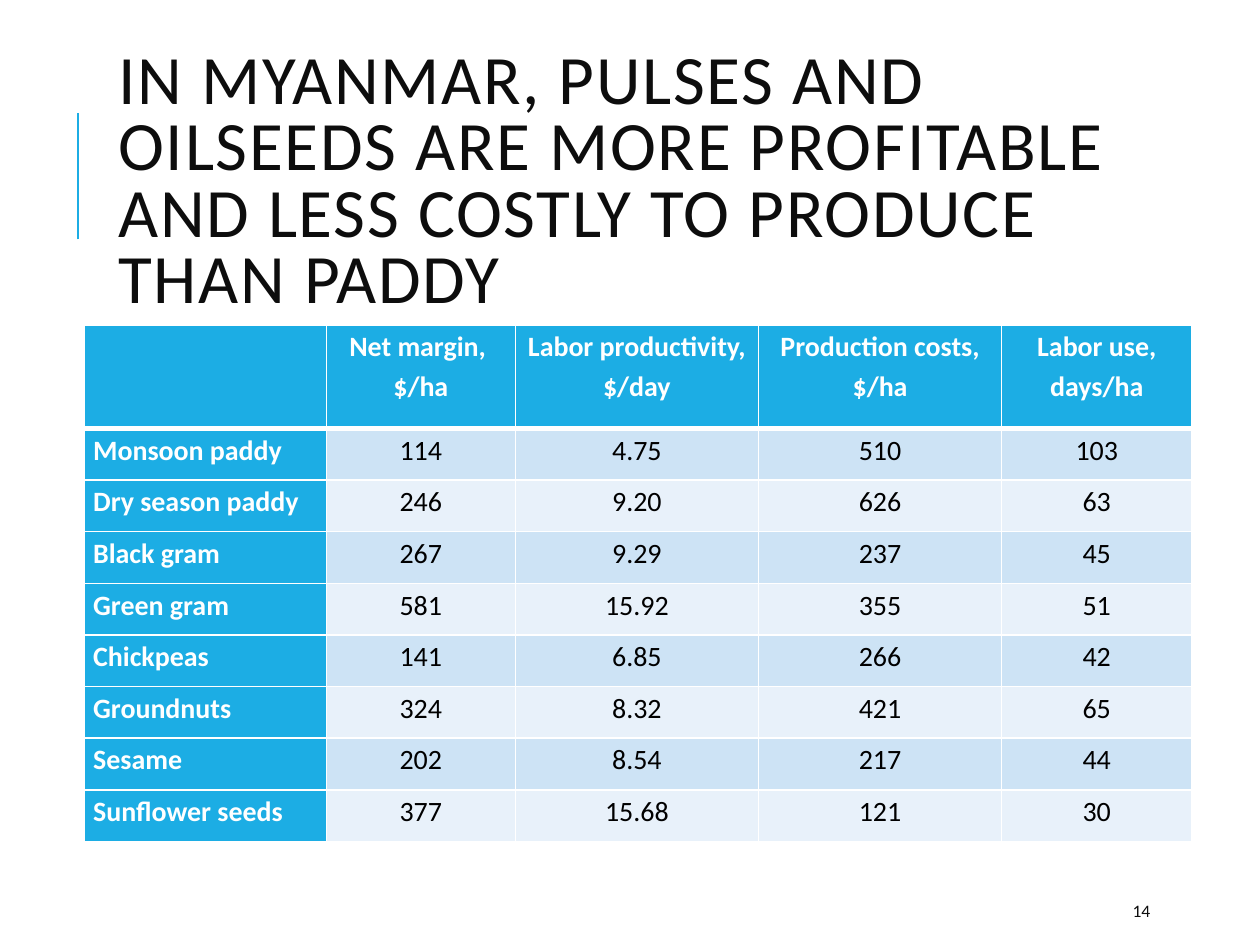
from pptx import Presentation
from pptx.dml.color import RGBColor as RGB
from pptx.enum.shapes import MSO_CONNECTOR as CONN
from pptx.enum.text import MSO_ANCHOR as ANCHOR, MSO_AUTO_SIZE as AUTO, PP_ALIGN as ALIGN
from pptx.oxml import parse_xml
from pptx.oxml.ns import nsdecls
from pptx.util import Inches, Pt

COLORS = {"accent": "1CADE4", "ink": "0D0D0D", "black": "000000",
          "white": "FFFFFF", "odd": "CDE3F5", "even": "E8F1FA"}
ROWS = [
    ("", "Net margin, \v$/ha", "Labor productivity, $/day",
     "Production costs, $/ha", "Labor use, days/ha"),
    ("Monsoon paddy", "114", "4.75", "510", "103"),
    ("Dry season paddy", "246", "9.20", "626", "63"),
    ("Black gram", "267", "9.29", "237", "45"),
    ("Green gram", "581", "15.92", "355", "51"),
    ("Chickpeas", "141", "6.85", "266", "42"),
    ("Groundnuts", "324", "8.32", "421", "65"),
    ("Sesame", "202", "8.54", "217", "44"),
    ("Sunflower seeds", "377", "15.68", "121", "30"),
]
COL_WIDTHS = [1.92, 1.5, 1.93, 1.93, 1.51]
ROW_H = 0.41


def style(p, size, color, bold=False):
    for r in p.runs:
        r.font.name = "Calibri"
        r.font.size = Pt(size)
        r.font.bold = bold
        r.font.color.rgb = RGB.from_string(COLORS[color])


def add_border(cell, side, width):
    cell._tc.get_or_add_tcPr().append(parse_xml(
        f'<a:ln{side} {nsdecls("a")} w="{Pt(width)}"><a:solidFill>'
        f'<a:srgbClr val="{COLORS["white"]}"/></a:solidFill></a:ln{side}>'))


prs = Presentation()
prs.slide_width, prs.slide_height = Inches(10), Inches(7.5)
s = prs.slides.add_slide(prs.slide_layouts[5])

bar = s.shapes.add_connector(CONN.STRAIGHT, Inches(0.62), Inches(1.9), Inches(0.62), Inches(0.9))
bar.line.color.rgb = RGB.from_string(COLORS["accent"])
bar.line.width = Pt(1.5)
bar._element.spPr.append(parse_xml(f'<a:effectLst {nsdecls("a")}/>'))

title = s.shapes.title
title.left, title.top = Inches(0.84), Inches(0.64)
title.width, title.height = Inches(8.85), Inches(1.64)
tf = title.text_frame
tf.text = ("IN MYANMAR, PULSES AND OILSEEDS ARE MORE PROFITABLE "
           "AND LESS COSTLY TO PRODUCE THAN PADDY")
tf.word_wrap = True
tf.auto_size = AUTO.NONE
tf.vertical_anchor = ANCHOR.MIDDLE
p = tf.paragraphs[0]
p.alignment = ALIGN.LEFT
p.line_spacing = 0.8
style(p, 39.6, "ink")
p.runs[0].font._element.set("spc", "100")

number = s.shapes.add_textbox(Inches(8.89), Inches(7.08), Inches(0.8), Inches(0.3))
tf = number.text_frame
tf.text = "14"
tf.word_wrap = True
tf.vertical_anchor = ANCHOR.MIDDLE
style(tf.paragraphs[0], 10, "ink")

table = s.shapes.add_table(len(ROWS), len(COL_WIDTHS), Inches(0.67), Inches(2.58),
                           Inches(sum(COL_WIDTHS)), Inches(ROW_H * (len(ROWS) + 1))).table
table.first_col = True
for col, width in zip(table.columns, COL_WIDTHS):
    col.width = Inches(width)

for i, values in enumerate(ROWS):
    table.rows[i].height = Inches(ROW_H * (2 if i == 0 else 1))
    for j, value in enumerate(values):
        cell = table.cell(i, j)
        heading = i == 0 or j == 0
        fill = "accent" if heading else "odd" if i % 2 else "even"
        for side in "LRTB":
            thick = (i, side) in [(0, "B"), (1, "T")]
            add_border(cell, side, 3 if thick else 1)
        cell.fill.solid()
        cell.fill.fore_color.rgb = RGB.from_string(COLORS[fill])
        cell.margin_left = cell.margin_right = Inches(0.07)
        cell.margin_top = cell.margin_bottom = 0
        cell.text_frame.text = value
        p = cell.text_frame.paragraphs[0]
        p.alignment = ALIGN.CENTER if j else ALIGN.LEFT
        p.line_spacing = 1.15
        style(p, 16, "white" if heading else "black", heading)

prs.save("out.pptx")
